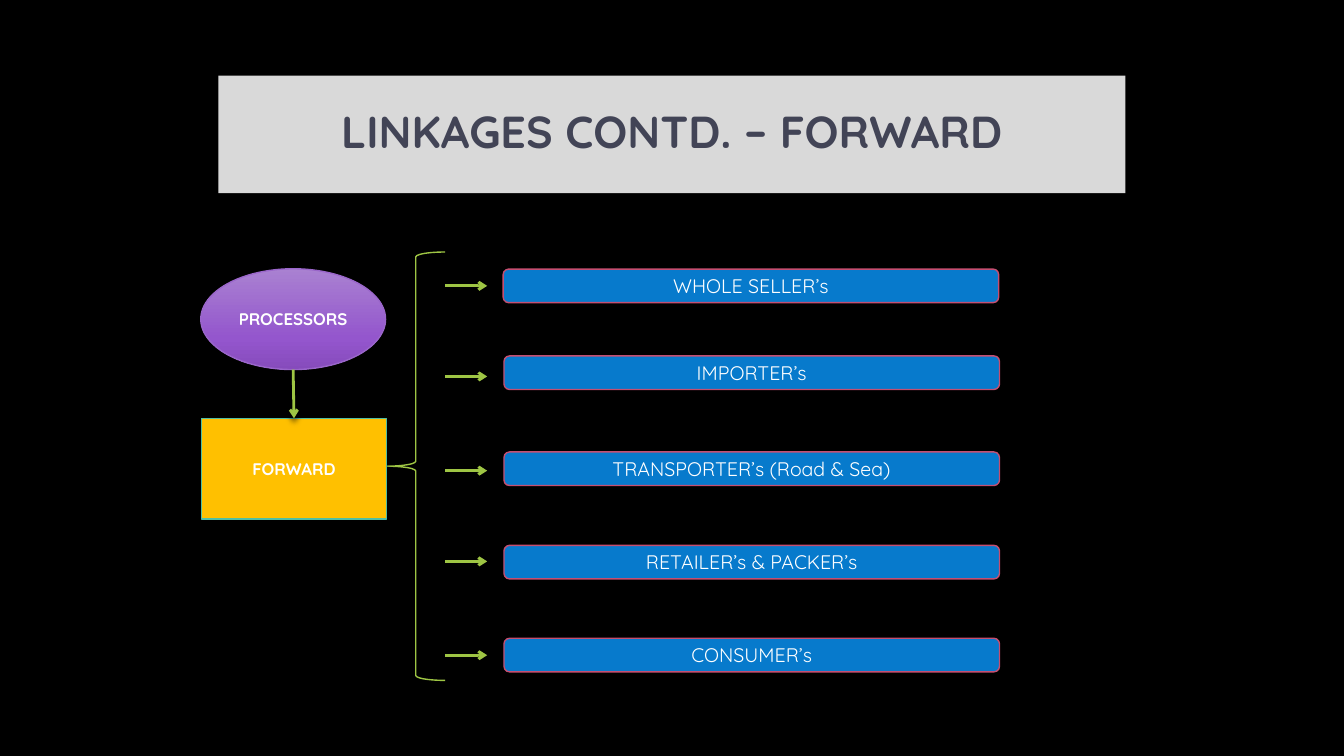
from copy import deepcopy

from lxml.etree import SubElement
from pptx import Presentation
from pptx.dml.color import RGBColor
from pptx.enum.shapes import MSO_CONNECTOR, MSO_SHAPE
from pptx.enum.text import MSO_ANCHOR, PP_ALIGN
from pptx.oxml.ns import qn
from pptx.util import Pt

GREEN = "9EC544"
WHITE = "FFFFFF"
TITLE_TEXT = {"size": Pt(32), "bold": True}
NODE_TEXT = {"size": Pt(12), "bold": True}
BAR_TEXT = {"size": Pt(14), "bold": False}
PURPLE_STOPS = [(0, "A981D1"), (0.69, "9456CD"), (1, "864BBC")]

BAR_WIDTH, BAR_HEIGHT = 354, 24
BARS = [
    ("WHOLE SELLER’s", 359.4, 192.2, 204.2),
    ("IMPORTER’s", 360, 254.2, 268.9),
    ("TRANSPORTER’s (Road & Sea)", 360, 322.8, 336.2),
    ("RETAILER’s & PACKER’s", 360, 389.5, 401),
    ("CONSUMER’s", 360, 455.9, 468),
]


def color(value):
    return RGBColor.from_string(value)


class SlideBuilder:
    font_name = "Quicksand"

    def __init__(self, page):
        self.page = page

    def background(self, fill):
        self.page.background.fill.solid()
        self.page.background.fill.fore_color.rgb = color(fill)

    def shape(self, kind, left, top, width, height, fill=None, line=None):
        box = self.page.shapes.add_shape(kind, Pt(left), Pt(top), Pt(width), Pt(height))
        box.shadow.inherit = False
        if fill:
            box.fill.solid()
            box.fill.fore_color.rgb = color(fill)
        else:
            box.fill.background()
        if line:
            box.line.color.rgb = color(line)
            box.line.width = Pt(1)
        else:
            box.line.fill.background()
        return box

    def text(self, box, words, style, ink=WHITE, spacing=1.0):
        frame = box.text_frame
        frame.word_wrap = True
        frame.vertical_anchor = MSO_ANCHOR.MIDDLE
        para = frame.paragraphs[0]
        para.alignment = PP_ALIGN.CENTER
        para.line_spacing = spacing
        span = para.add_run()
        span.text = words
        span.font.name = self.font_name
        span.font.color.rgb = color(ink)
        for name, value in style.items():
            setattr(span.font, name, value)

    def gradient(self, box, stops):
        box.fill.gradient()
        box.fill.gradient_angle = 270
        stop_list = box._element.spPr.find(qn("a:gradFill")).find(qn("a:gsLst"))
        stop_list.append(deepcopy(stop_list[-1]))
        for stop, (position, tint) in zip(box.fill.gradient_stops, stops):
            stop.position = position
            stop.color.rgb = color(tint)

    def shadow(self, item):
        properties = item._element.spPr
        effects = properties.find(qn("a:effectLst"))
        if effects is None:
            effects = SubElement(properties, qn("a:effectLst"))
        outer = SubElement(effects, qn("a:outerShdw"), blurRad=str(Pt(4)),
                           dist=str(Pt(3)), dir="5400000", rotWithShape="0")
        black = SubElement(outer, qn("a:srgbClr"), val="000000")
        SubElement(black, qn("a:alpha"), val="54000")

    def arrow(self, left, top, right, bottom, target=None):
        connector = self.page.shapes.add_connector(
            MSO_CONNECTOR.STRAIGHT, Pt(left), Pt(top), Pt(right), Pt(bottom))
        connector.line.color.rgb = color(GREEN)
        connector.line.width = Pt(2)
        SubElement(connector.line._get_or_add_ln(), qn("a:tailEnd"), type="arrow")
        self.shadow(connector)
        if target is not None:
            connector.end_connect(target, 0)


def main():
    deck = Presentation()
    deck.slide_width, deck.slide_height = Pt(960), Pt(540)
    builder = SlideBuilder(deck.slides.add_slide(deck.slide_layouts[6]))
    builder.background("000000")

    title = builder.shape(MSO_SHAPE.RECTANGLE, 156, 54, 648, 84, "D9D9D9")
    builder.text(title, "LINKAGES CONTD. – FORWARD", TITLE_TEXT, "424456", 0.9)

    builder.shape(MSO_SHAPE.LEFT_BRACE, 276, 180, 42, 306, line=GREEN)
    for words, left, top, arrow_height in BARS:
        builder.arrow(318, arrow_height, 348, arrow_height)
        bar = builder.shape(MSO_SHAPE.ROUNDED_RECTANGLE, left, top,
                            BAR_WIDTH, BAR_HEIGHT, "077ACC", "C54F71")
        builder.text(bar, words, BAR_TEXT)

    forward = builder.shape(MSO_SHAPE.RECTANGLE, 144, 298.8, 132, 72, "FFC000", "50BEA3")
    builder.text(forward, "FORWARD", NODE_TEXT)
    builder.shadow(forward)

    processors = builder.shape(MSO_SHAPE.OVAL, 143.4, 192, 132, 72, line="9A66CA")
    builder.gradient(processors, PURPLE_STOPS)
    builder.text(processors, "PROCESSORS", NODE_TEXT)
    builder.shadow(processors)

    builder.arrow(209.4, 264, 210, 298.8, forward)
    deck.save("out.pptx")


if __name__ == "__main__":
    main()
